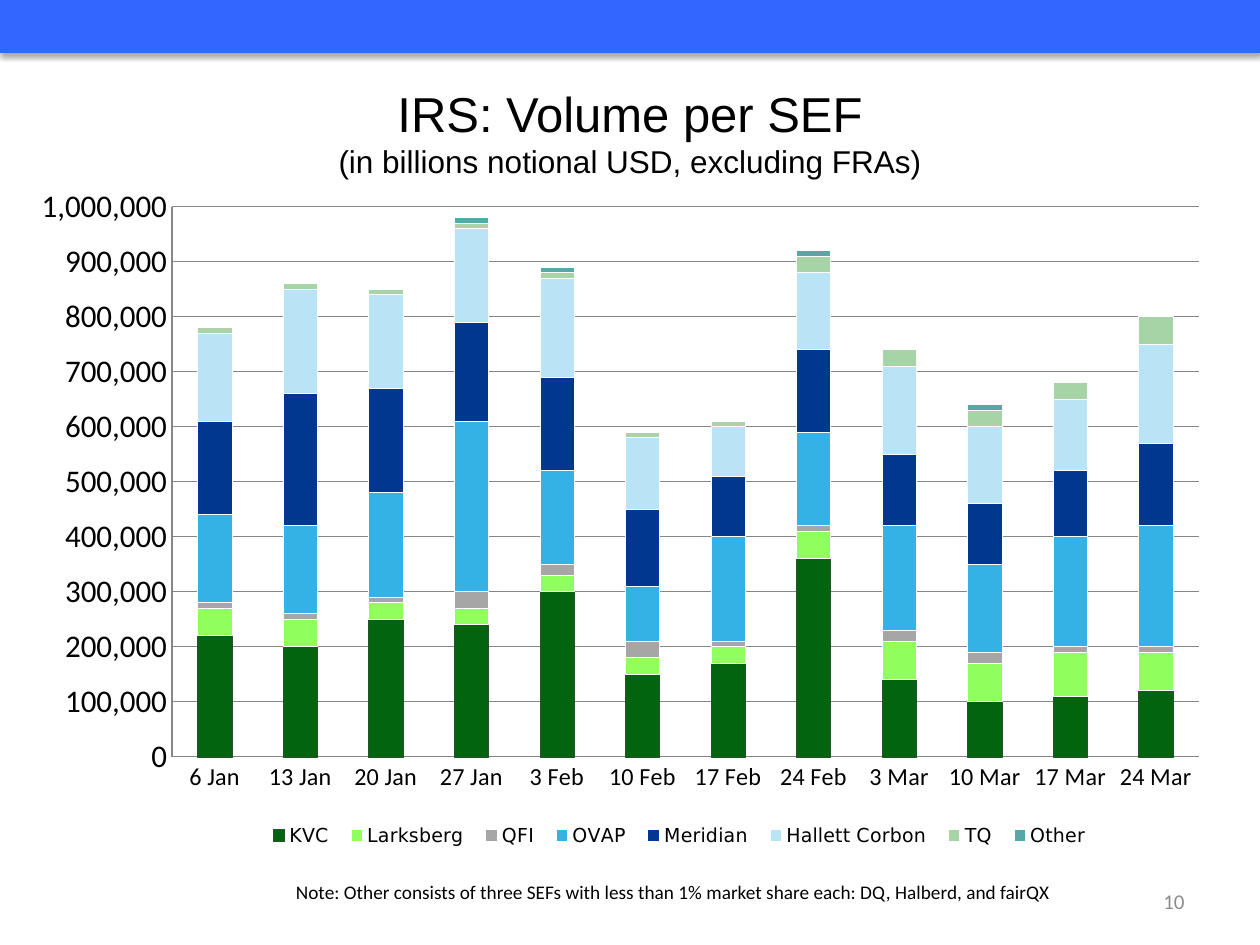
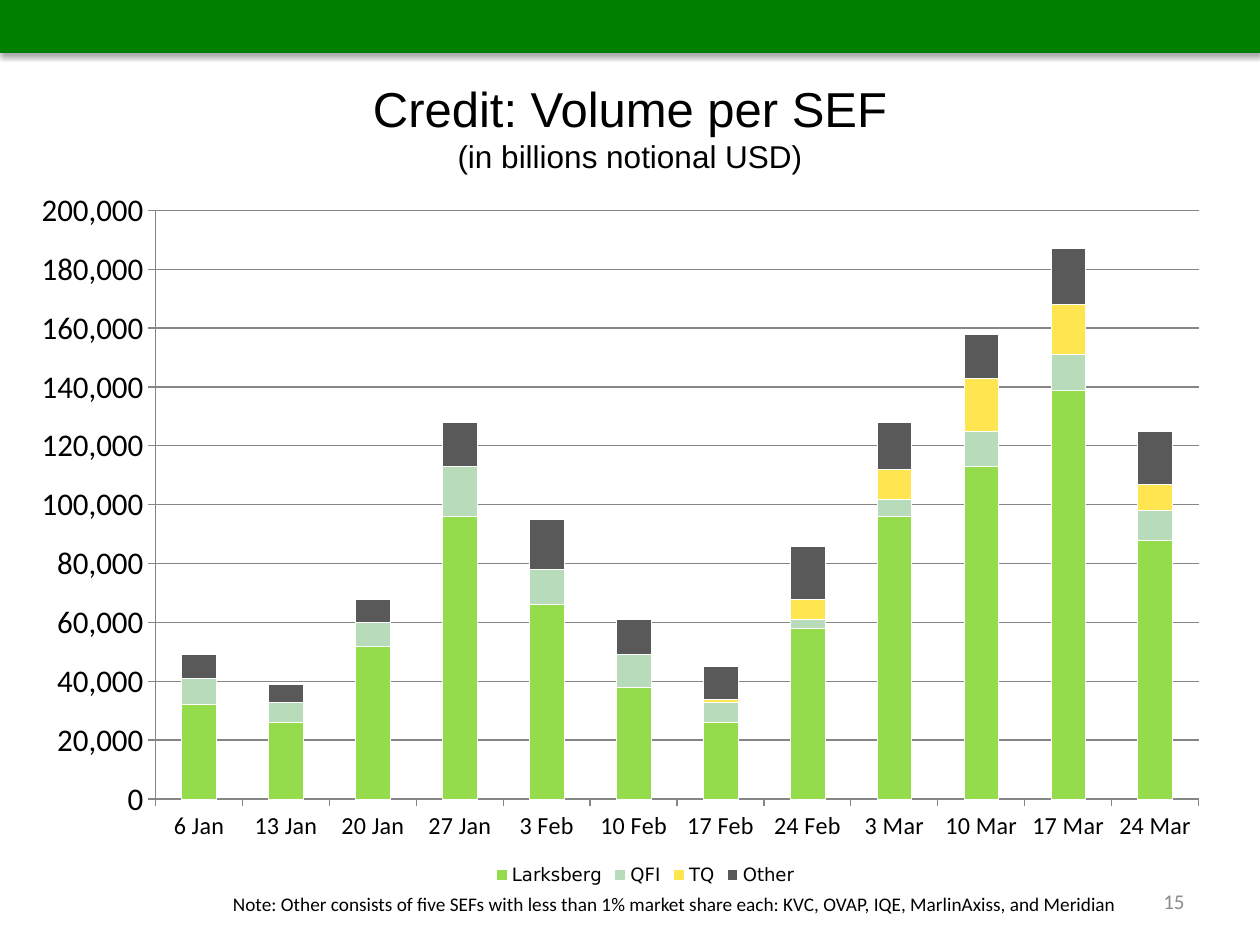
"""Build two slides of stacked weekly volume charts per trading venue."""
from dataclasses import dataclass

from lxml import etree
from pptx import Presentation
from pptx.chart.data import CategoryChartData
from pptx.dml.color import RGBColor
from pptx.enum.chart import XL_CHART_TYPE, XL_LEGEND_POSITION, XL_TICK_MARK
from pptx.enum.shapes import MSO_SHAPE
from pptx.enum.text import MSO_ANCHOR, MSO_AUTO_SIZE, PP_ALIGN
from pptx.oxml.ns import qn
from pptx.util import Pt

STACKED = XL_CHART_TYPE.COLUMN_STACKED
BOTTOM = XL_LEGEND_POSITION.BOTTOM
TICK_NONE, TICK_OUT = XL_TICK_MARK.NONE, XL_TICK_MARK.OUTSIDE
RECT = MSO_SHAPE.RECTANGLE
MIDDLE = MSO_ANCHOR.MIDDLE
NO_FIT = MSO_AUTO_SIZE.NONE
LEFT, CENTER, RIGHT = PP_ALIGN.LEFT, PP_ALIGN.CENTER, PP_ALIGN.RIGHT
PX = 9144


@dataclass(frozen=True)
class Theme:
    title_font: str = "Arial"
    body_font: str = "Calibri"
    legend_font: str = "DejaVu Sans"
    text: str = "000000"
    number: str = "8C8C8C"
    axis: str = "868686"
    edge: str = "FFFFFF"
    title_size: int = 28
    subtitle_size: int = 18
    value_size: int = 18
    category_size: int = 14
    number_size: int = 12
    note_size: int = 11


T = Theme()
WEEKS = ["6 Jan", "13 Jan", "20 Jan", "27 Jan", "3 Feb", "10 Feb",
         "17 Feb", "24 Feb", "3 Mar", "10 Mar", "17 Mar", "24 Mar"]

SLIDES = [
    dict(
        title="IRS: Volume per SEF",
        subtitle="(in billions notional USD, excluding FRAs)",
        title_height=125, band="3366FF", number="10",
        note="Note: Other consists of three SEFs with less than 1% market share each: "
             "DQ, Halberd, and fairQX",
        note_box=(225, 687, 775, 42),
        chart_height=550, maximum=1000000, tick=TICK_NONE, legend_size=11,
        plot=(0.096, 0.04, 0.888, 0.794), legend=(0.17, 0.925, 0.73, 0.045),
        unit=10000,
        series=[
            ("KVC", "02640E", "285229", [22, 20, 25, 24, 30, 15, 17, 36, 14, 10, 11, 12]),
            ("Larksberg", "90FF5E", T.edge, [5, 5, 3, 3, 3, 3, 3, 5, 7, 7, 8, 7]),
            ("QFI", "A6A6A6", T.edge, [1, 1, 1, 3, 2, 3, 1, 1, 2, 2, 1, 1]),
            ("OVAP", "35B2E5", T.edge, [16, 16, 19, 31, 17, 10, 19, 17, 19, 16, 20, 22]),
            ("Meridian", "01378F", T.edge, [17, 24, 19, 18, 17, 14, 11, 15, 13, 11, 12, 15]),
            ("Hallett Corbon", "B8E4F6", T.edge,
             [16, 19, 17, 17, 18, 13, 9, 14, 16, 14, 13, 18]),
            ("TQ", "A6D4A7", T.edge, [1, 1, 1, 1, 1, 1, 1, 3, 3, 3, 3, 5]),
            ("Other", "57A7A6", T.edge, [0, 0, 0, 1, 1, 0, 0, 1, 0, 1, 0, 0]),
        ],
    ),
    dict(
        title="Credit: Volume per SEF",
        subtitle="(in billions notional USD)",
        title_height=117, band="008000", number="15",
        note="Note: Other consists of five SEFs with less than 1% market share each: "
             "KVC, OVAP, IQE, MarlinAxiss, and Meridian",
        note_box=(175, 696, 825, 42),
        chart_height=567, maximum=200000, tick=TICK_OUT, legend_size=10.5,
        plot=(0.081, 0.044, 0.903, 0.824), legend=(0.37, 0.95, 0.27, 0.05),
        unit=1000,
        series=[
            ("Larksberg", "94DC4B", T.edge,
             [32, 26, 52, 96, 66, 38, 26, 58, 96, 113, 139, 88]),
            ("QFI", "B8DCB9", T.edge, [9, 7, 8, 17, 12, 11, 7, 3, 6, 12, 12, 10]),
            ("TQ", "FFE550", T.edge, [0, 0, 0, 0, 0, 0, 1, 7, 10, 18, 17, 9]),
            ("Other", "595959", T.edge, [8, 6, 8, 15, 17, 12, 11, 18, 16, 15, 19, 18]),
        ],
    ),
]


def set_font(font, name, size, color=T.text):
    font.name, font.size, font.bold = name, Pt(size), False
    font.color.rgb = RGBColor.from_string(color)


def set_layout(parent, index, box, inner=False):
    for old in parent.findall(qn("c:layout")):
        parent.remove(old)
    layout = etree.Element(qn("c:layout"))
    manual = etree.SubElement(layout, qn("c:manualLayout"))
    settings = [("layoutTarget", "inner")] if inner else []
    settings += [("xMode", "edge"), ("yMode", "edge"), *zip("xywh", box)]
    for tag, value in settings:
        etree.SubElement(manual, qn("c:" + tag), val=str(value))
    parent.insert(index, layout)


prs = Presentation()
prs.slide_width, prs.slide_height = 1000 * PX, 750 * PX

for data in SLIDES:
    s = prs.slides.add_slide(prs.slide_layouts[5])

    title = s.shapes.title
    title.left, title.top = 50 * PX, 42 * PX
    title.width, title.height = 900 * PX, data["title_height"] * PX
    tf = title.text_frame
    tf.auto_size, tf.vertical_anchor = NO_FIT, MIDDLE
    p = tf.paragraphs[0]
    p.text = data["title"] + "\v" + data["subtitle"]
    p.alignment = CENTER
    for r, size in zip(p.runs, (T.title_size, T.subtitle_size)):
        set_font(r.font, T.title_font, size)
    etree.SubElement(p._p.find(qn("a:br")), qn("a:rPr"), sz=str(T.title_size * 100))

    chart_data = CategoryChartData(number_format="#,##0")
    chart_data.categories = WEEKS
    for name, _, _, values in data["series"]:
        chart_data.add_series(name, [v * data["unit"] for v in values])
    chart = s.shapes.add_chart(STACKED, 33 * PX, 142 * PX, 933 * PX,
                               data["chart_height"] * PX, chart_data).chart
    chart.has_title = False
    set_font(chart.font, T.body_font, T.value_size)

    plot = chart.plots[0]
    plot.gap_width, plot.overlap, plot.vary_by_categories = 150, 100, False
    for series, (_, fill, edge, _) in zip(plot.series, data["series"]):
        series.format.fill.solid()
        series.format.fill.fore_color.rgb = RGBColor.from_string(fill)
        series.format.line.color.rgb = RGBColor.from_string(edge)
        series.format.line.width = Pt(0.25)

    cat, val = chart.category_axis, chart.value_axis
    val.minimum_scale, val.maximum_scale = 0, data["maximum"]
    val.major_unit = data["maximum"] / 10
    val.has_major_gridlines = True
    val.tick_labels.number_format = "#,##0"
    val.tick_labels.number_format_is_linked = False
    for axis, size in ((cat, T.category_size), (val, T.value_size)):
        axis.major_tick_mark, axis.minor_tick_mark = data["tick"], TICK_NONE
        set_font(axis.tick_labels.font, T.body_font, size)
    for part in (cat, val, val.major_gridlines):
        part.format.line.color.rgb = RGBColor.from_string(T.axis)
        part.format.line.width = Pt(0.75)

    chart.has_legend = True
    legend = chart.legend
    legend.position, legend.include_in_layout = BOTTOM, False
    set_font(legend.font, T.legend_font, data["legend_size"])
    set_layout(chart._chartSpace.chart.plotArea, 0, data["plot"], inner=True)
    set_layout(legend._element, 1, data["legend"])

    band = s.shapes.add_shape(RECT, 0, 0, 1000 * PX, 42 * PX)
    band.fill.solid()
    band.fill.fore_color.rgb = RGBColor.from_string(data["band"])
    band.line.fill.background()
    band.shadow.inherit = False
    effects = band._element.spPr.find(qn("a:effectLst"))
    shadow = etree.SubElement(effects, qn("a:outerShdw"), blurRad=str(Pt(3.1)),
                              dist=str(Pt(1.8)), dir="5400000", rotWithShape="0")
    color = etree.SubElement(shadow, qn("a:srgbClr"), val="000000")
    etree.SubElement(color, qn("a:alpha"), val="35000")

    for text, box, align, size, color in (
        (data["number"], (717, 695, 233, 40), RIGHT, T.number_size, T.number),
        (data["note"], data["note_box"], LEFT, T.note_size, T.text),
    ):
        sp = s.shapes.add_textbox(*(n * PX for n in box))
        tf = sp.text_frame
        tf.word_wrap, tf.vertical_anchor = True, MIDDLE
        p = tf.paragraphs[0]
        p.text, p.alignment = text, align
        set_font(p.runs[0].font, T.body_font, size, color)

prs.save("out.pptx")
